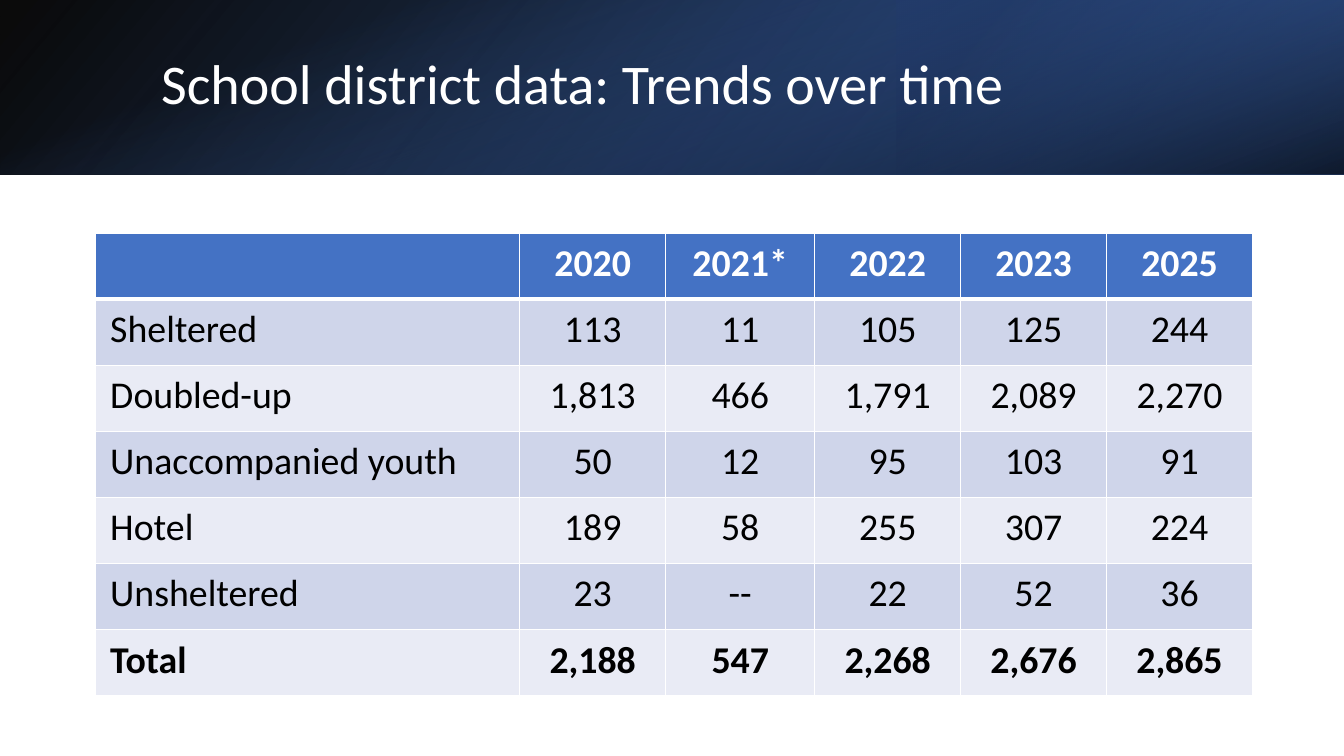
import dataclasses

import lxml.etree
import pptx
import pptx.dml.color
import pptx.enum.shapes
import pptx.enum.text
import pptx.oxml
import pptx.oxml.ns
import pptx.util

PX = 9525


@dataclasses.dataclass(frozen=True)
class Theme:
    font: str = "Calibri"
    title_size: int = 40
    table_size: int = 27
    white: str = "FFFFFF"
    black: str = "000000"
    blue: str = "4472C4"
    deep_blue: str = "2F5597"
    navy: str = "203864"
    bands: tuple = ("CFD5EA", "E9EBF5")


THEME = Theme()

YEARS = ["", "2020", "2021*", "2022", "2023", "2025"]
COUNTS = [
    ["Sheltered", "113", "11", "105", "125", "244"],
    ["Doubled-up", "1,813", "466", "1,791", "2,089", "2,270"],
    ["Unaccompanied youth", "50", "12", "95", "103", "91"],
    ["Hotel", "189", "58", "255", "307", "224"],
    ["Unsheltered", "23", "--", "22", "52", "36"],
    ["Total", "2,188", "547", "2,268", "2,676", "2,865"],
]
COLUMN_WIDTHS = [404, 139, 142, 139, 139, 139]


def to_emu(box):
    return [pptx.util.Emu(length * PX) for length in box]


def rgb(color):
    return pptx.dml.color.RGBColor.from_string(color)


def set_font(para, size, color, bold=False):
    para.font.name = THEME.font
    para.font.size = pptx.util.Pt(size)
    para.font.color.rgb = rgb(color)
    para.font.bold = bold


def add_wash(page, box, stops, angle, rotation=0, flipped=False):
    wash = page.shapes.add_shape(
        pptx.enum.shapes.MSO_SHAPE.RECTANGLE, *to_emu(box))
    wash.shadow.inherit = False
    wash.line.fill.background()
    wash.rotation = rotation
    properties = wash.element.spPr
    if flipped:
        properties.find(pptx.oxml.ns.qn("a:xfrm")).set("flipH", "1")
    stop_xml = "".join(
        f'<a:gs pos="{position * 1000}"><a:srgbClr val="{color}">'
        f'<a:alpha val="{opacity * 1000}"/></a:srgbClr></a:gs>'
        for position, color, opacity in stops)
    gradient = pptx.oxml.parse_xml(
        f'<a:gradFill {pptx.oxml.ns.nsdecls("a")} rotWithShape="1">'
        f'<a:gsLst>{stop_xml}</a:gsLst>'
        f'<a:lin ang="{angle * 60000}" scaled="0"/></a:gradFill>')
    properties.find(pptx.oxml.ns.qn("a:prstGeom")).addnext(gradient)


def add_banner(page, box):
    left, top, width, height = box
    add_wash(page, box,
             [(0, THEME.black, 96), (100, THEME.deep_blue, 100)],
             angle=140, flipped=True)
    third = width // 3
    add_wash(page, (left + width - third, top, third, height),
             [(19, THEME.navy, 68), (100, THEME.blue, 79)],
             angle=320, rotation=180, flipped=True)
    shift = (width - height) // 2
    add_wash(page, (left + shift, top - shift, height, width),
             [(23, THEME.blue, 0), (99, THEME.black, 74)],
             angle=340, rotation=90)


def add_title(page, box, text):
    frame = page.shapes.add_textbox(*to_emu(box)).text_frame
    frame.word_wrap = True
    frame.vertical_anchor = pptx.enum.text.MSO_ANCHOR.MIDDLE
    para = frame.paragraphs[0]
    para.text = text
    para.line_spacing = 0.9
    set_font(para, THEME.title_size, THEME.white)


def set_borders(cell, top, bottom):
    properties = cell._tc.get_or_add_tcPr()
    for side, points in (("L", 1), ("R", 1), ("T", top), ("B", bottom)):
        line = lxml.etree.SubElement(
            properties, pptx.oxml.ns.qn(f"a:ln{side}"),
            w=str(pptx.util.Pt(points)))
        fill = lxml.etree.SubElement(line, pptx.oxml.ns.qn("a:solidFill"))
        lxml.etree.SubElement(
            fill, pptx.oxml.ns.qn("a:srgbClr"), val=THEME.white)


def fill_cell(cell, text, row, column, is_total):
    is_header = row == 0
    set_borders(cell, top=3 if row == 1 else 1, bottom=3 if is_header else 1)
    cell.fill.solid()
    cell.fill.fore_color.rgb = rgb(
        THEME.blue if is_header else THEME.bands[(row - 1) % 2])
    cell.margin_left = cell.margin_right = 14 * PX
    cell.margin_top = cell.margin_bottom = 7 * PX
    para = cell.text_frame.paragraphs[0]
    para.text = text
    if column:
        para.alignment = pptx.enum.text.PP_ALIGN.CENTER
    set_font(para, THEME.table_size,
             THEME.white if is_header else THEME.black,
             bold=is_header or is_total)


def add_trend_table(page, box):
    rows = [YEARS] + COUNTS
    table = page.shapes.add_table(
        len(rows), len(YEARS), *to_emu(box)).table
    for column, width in zip(table.columns, COLUMN_WIDTHS):
        column.width = pptx.util.Emu(width * PX)
    for row, texts in enumerate(rows):
        for column, text in enumerate(texts):
            fill_cell(table.cell(row, column), text, row, column,
                      is_total=row == len(rows) - 1)


def main():
    deck = pptx.Presentation()
    deck.slide_width, deck.slide_height = to_emu((1280, 720))
    page = deck.slides.add_slide(deck.slide_layouts[6])
    add_banner(page, (0, 0, 1280, 166))
    add_title(page, (144, 36, 1054, 92),
              "School district data: Trends over time")
    add_trend_table(page, (91, 222, sum(COLUMN_WIDTHS), 441))
    deck.save("out.pptx")


if __name__ == "__main__":
    main()
